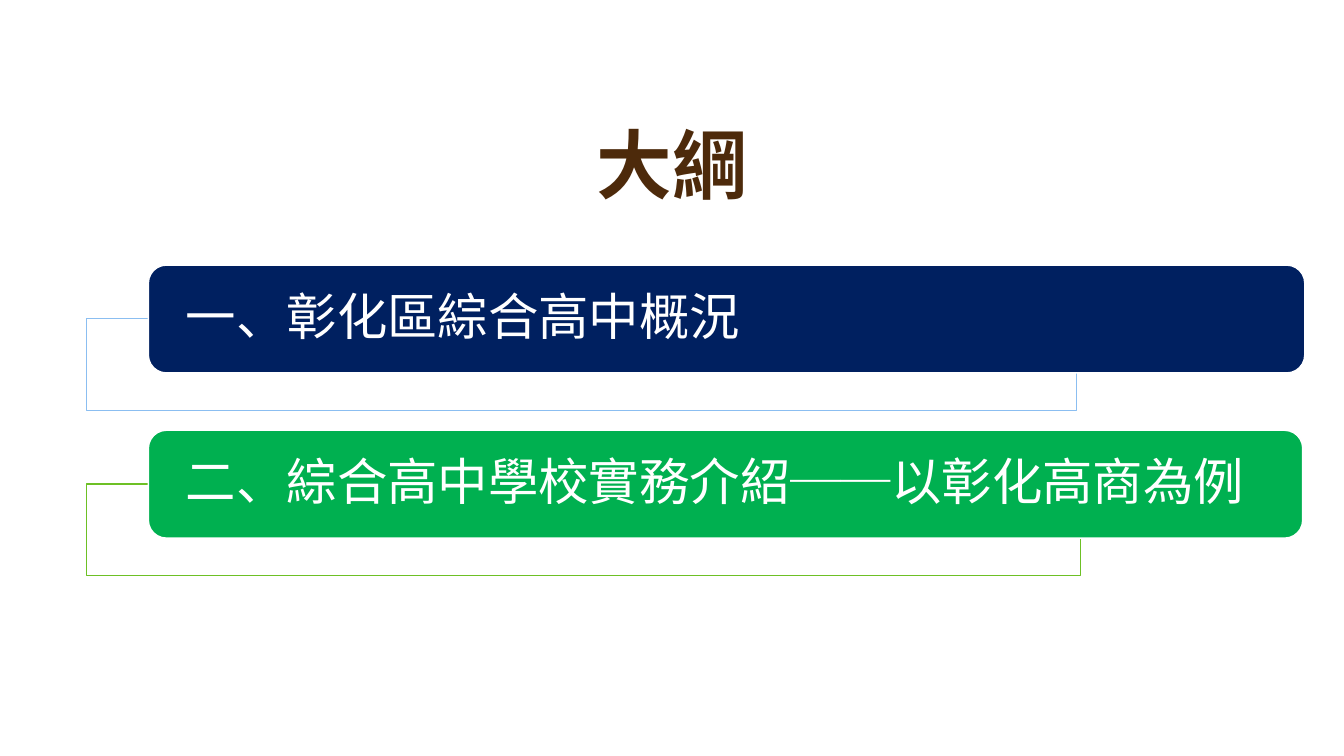
from dataclasses import dataclass

from lxml.etree import SubElement
from pptx import Presentation
from pptx.dml.color import RGBColor as RGB
from pptx.enum.shapes import MSO_SHAPE as SHAPE
from pptx.enum.text import MSO_ANCHOR as ANCHOR, PP_ALIGN as ALIGN
from pptx.oxml.ns import qn
from pptx.util import Pt


@dataclass(frozen=True)
class Theme:
    """Colours, font and type sizes of the slide."""
    font: str = "Noto Sans CJK TC"
    title_size: int = 54
    item_size: int = 36
    brown: str = "4D2A0B"
    white: str = "FFFFFF"
    navy: str = "002060"
    green: str = "00B050"
    sky: str = "8BBEF1"
    lime: str = "6DC025"


T = Theme()
ITEMS = [
    ("一、彰化區綜合高中概況", T.navy, T.sky, 826, 707),
    ("二、綜合高中學校實務介紹──以彰化高商為例", T.green, T.lime, 824.5, 710),
]


def write(tf, text, size, color, bold=False, anchor=ANCHOR.MIDDLE, inset=7.2, inset_y=0):
    """Write one left-aligned paragraph into a text frame."""
    tf.word_wrap = True
    tf.vertical_anchor = anchor
    tf.margin_left = tf.margin_right = Pt(inset)
    tf.margin_top = tf.margin_bottom = Pt(inset_y)
    p = tf.paragraphs[0]
    p.alignment = ALIGN.LEFT
    p.line_spacing = 0.9
    r = p.add_run()
    r.text = text
    r.font.size = Pt(size)
    r.font.bold = bold
    r.font.color.rgb = RGB.from_string(color)
    r.font.name = T.font
    SubElement(r.font._element, qn("a:ea"), typeface=T.font)


def add_box(s, kind, x, y, w, h, fill, line):
    """Add a filled and outlined shape without shadow."""
    sp = s.shapes.add_shape(kind, Pt(x), Pt(y), Pt(w), Pt(h))
    sp.shadow.inherit = False
    sp.fill.solid()
    sp.fill.fore_color.rgb = RGB.from_string(fill)
    sp.line.color.rgb = RGB.from_string(line)
    sp.line.width = Pt(1)
    return sp


def add_title(s, text, x, y, w, h):
    """Place the title placeholder in the given box."""
    sp = s.shapes.title
    sp.left, sp.top, sp.width, sp.height = Pt(x), Pt(y), Pt(w), Pt(h)
    write(sp.text_frame, text, T.title_size, T.brown, bold=True,
          anchor=ANCHOR.BOTTOM, inset_y=3.6)


def add_outline(s, items, x, y, pitch):
    """Stack the outline items, each a bar over a thin frame."""
    for i, (text, fill, line, bar_w, frame_w) in enumerate(items):
        top = y + i * pitch
        frame = add_box(s, SHAPE.RECTANGLE, x, top + 38.2, frame_w, 65.5, T.white, line)
        color = frame.fill._xPr.find(qn("a:solidFill"))[0]
        SubElement(color, qn("a:alpha"), val="90000")
        bar = add_box(s, SHAPE.ROUNDED_RECTANGLE, x + 44, top, bar_w, 77, fill, T.white)
        write(bar.text_frame, text, T.item_size, T.white, inset=23)


def main():
    """Build and save the outline slide."""
    prs = Presentation()
    prs.slide_width, prs.slide_height = Pt(960), Pt(540)
    s = prs.slides.add_slide(prs.slide_layouts[5])
    add_title(s, "大綱", 419, 76.3, 124.6, 77)
    add_outline(s, ITEMS, 62, 189.4, 118)
    prs.save("out.pptx")


if __name__ == "__main__":
    main()
